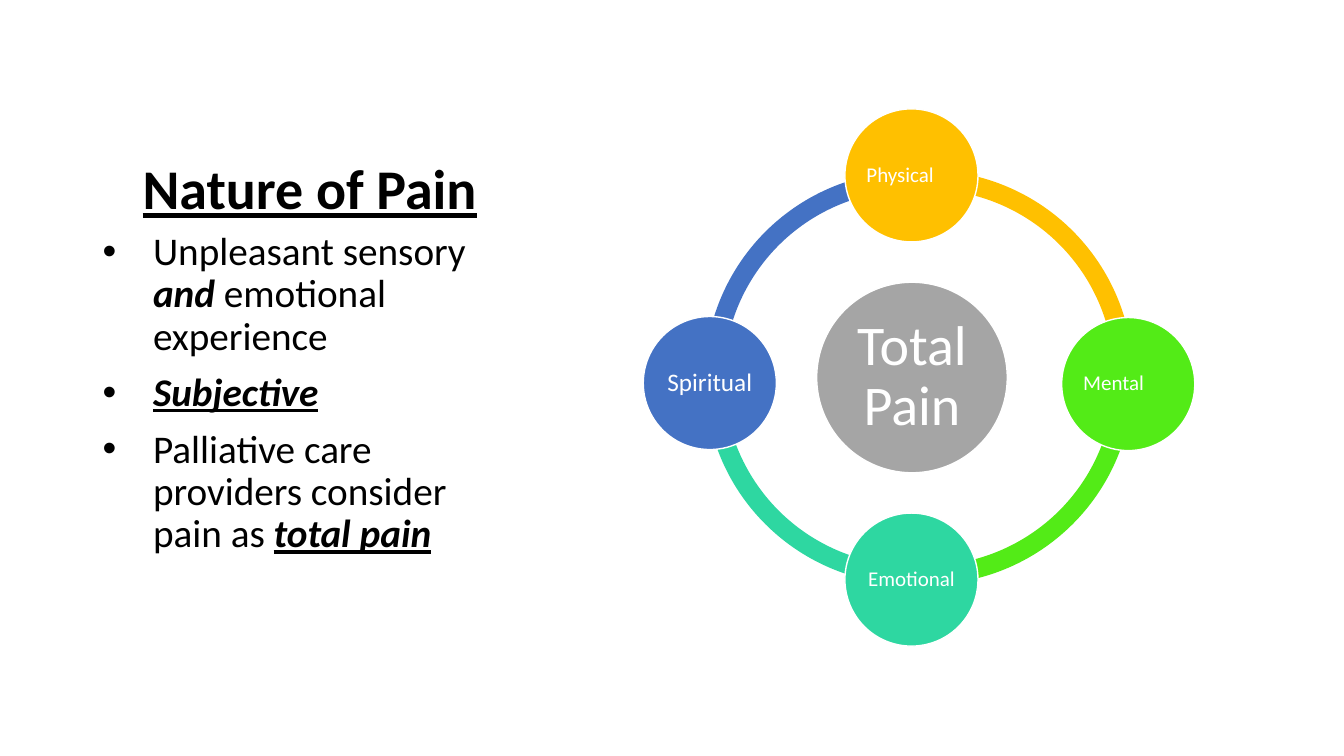
"""Build the Nature of Pain slide with its ring of four kinds of pain."""
from dataclasses import dataclass

from lxml.etree import SubElement
from pptx import Presentation
from pptx.dml.color import RGBColor
from pptx.enum.shapes import MSO_SHAPE
from pptx.enum.text import MSO_ANCHOR, MSO_AUTO_SIZE, PP_ALIGN
from pptx.oxml.ns import qn
from pptx.shapes.autoshape import Shape
from pptx.shapes.shapetree import GroupShapes
from pptx.text.text import TextFrame, _Paragraph, _Run
from pptx.util import Inches, Pt

FONT = "Calibri"
BLACK, WHITE, GREY = "000000", "FFFFFF", "A5A5A5"
BLUE, TEAL, GREEN, GOLD = "4472C4", "2ED7A1", "53EB17", "FFC000"
RING_SIZE, RING_THICKNESS = 4.1, 0.046
HUB_SIZE, NODE_SIZE = 1.89, 1.32
COLUMN_LEFT, COLUMN_WIDTH = 0.92, 4.3


@dataclass(frozen=True)
class Arc:
    left: float
    top: float
    start: float
    end: float
    fill: str


@dataclass(frozen=True)
class Circle:
    label: str
    left: float
    top: float
    diameter: float
    fill: str
    font_size: int
    inset: float


@dataclass(frozen=True)
class Phrase:
    text: str
    emphasis: bool = False
    underline: bool = False


ARCS = [
    Arc(6.99, 1.7, 107.032, 162.014, BLUE),
    Arc(6.99, 1.7, 53.986, 107.032, TEAL),
    Arc(7.14, 1.7, 1.123, 56.439, GREEN),
    Arc(7.14, 1.69, 159.555, 1.296, GOLD),
]
CIRCLES = [
    Circle("Total Pain", 8.1, 2.8, HUB_SIZE, GREY, 40, 0.06),
    Circle("Physical\t", 8.38, 1.08, NODE_SIZE, GOLD, 15, 0.02),
    Circle("Mental\t", 10.53, 3.15, NODE_SIZE, GREEN, 15, 0.02),
    Circle("Emotional", 8.38, 5.09, NODE_SIZE, TEAL, 15, 0.02),
    Circle("Spiritual ", 6.38, 3.14, NODE_SIZE, BLUE, 18, 0.03),
]
BULLETS = [
    [Phrase("Unpleasant sensory "), Phrase("and", True), Phrase(" emotional experience")],
    [Phrase("Subjective", True, True)],
    [Phrase("Palliative care providers consider pain as "), Phrase("total pain", True, True)],
]


def colour(value: str) -> RGBColor:
    """Turn a hex string into a colour."""
    return RGBColor.from_string(value)


def format_run(run: _Run, size: int, fill: str, bold: bool = False,
               italic: bool = False, underline: bool = False) -> None:
    """Set the font of one run."""
    font = run.font
    font.name, font.size = FONT, Pt(size)
    font.bold, font.italic, font.underline = bold, italic, underline
    font.color.rgb = colour(fill)


def prepare_frame(frame: TextFrame, anchor: MSO_ANCHOR) -> None:
    """Wrap the text at a fixed size and anchor it."""
    frame.word_wrap = True
    frame.auto_size = MSO_AUTO_SIZE.NONE
    frame.vertical_anchor = anchor


def centre_text(frame: TextFrame, text: str) -> _Run:
    """Write one centred paragraph and return its run."""
    frame.text = text
    paragraph = frame.paragraphs[0]
    paragraph.alignment = PP_ALIGN.CENTER
    paragraph.line_spacing = 0.9
    return paragraph.runs[0]


def add_filled_shape(shapes: GroupShapes, kind: MSO_SHAPE, left: float, top: float,
                     size: float, fill: str) -> Shape:
    """Add a square-framed shape with a solid fill and no shadow."""
    shape = shapes.add_shape(kind, Inches(left), Inches(top), Inches(size), Inches(size))
    shape.shadow.inherit = False
    shape.fill.solid()
    shape.fill.fore_color.rgb = colour(fill)
    return shape


def draw_arc(shapes: GroupShapes, arc: Arc) -> None:
    """Draw one quarter of the ring."""
    shape = add_filled_shape(shapes, MSO_SHAPE.BLOCK_ARC, arc.left, arc.top, RING_SIZE, arc.fill)
    shape.line.fill.background()
    for index, value in enumerate((arc.start, arc.end, RING_THICKNESS)):
        shape.adjustments[index] = value


def draw_circle(shapes: GroupShapes, circle: Circle) -> None:
    """Draw one labelled circle with a white outline."""
    shape = add_filled_shape(shapes, MSO_SHAPE.OVAL, circle.left, circle.top,
                             circle.diameter, circle.fill)
    shape.line.color.rgb = colour(WHITE)
    shape.line.width = Pt(1)
    frame = shape.text_frame
    prepare_frame(frame, MSO_ANCHOR.MIDDLE)
    frame.margin_left = frame.margin_right = Inches(circle.inset)
    frame.margin_top = frame.margin_bottom = Inches(circle.inset)
    format_run(centre_text(frame, circle.label), circle.font_size, WHITE)


def write_bullet(paragraph: _Paragraph, phrases: list[Phrase]) -> None:
    """Write one bulleted paragraph with a hanging indent."""
    paragraph.line_spacing = 0.9
    paragraph.space_before = Pt(10)
    properties = paragraph._p.get_or_add_pPr()
    properties.set("marL", str(Inches(0.5)))
    properties.set("indent", str(Inches(-0.5)))
    SubElement(properties, qn("a:buFont"), typeface="Arial")
    SubElement(properties, qn("a:buChar"), char="•")
    for phrase in phrases:
        run = paragraph.add_run()
        run.text = phrase.text
        format_run(run, 28, BLACK, phrase.emphasis, phrase.emphasis, phrase.underline)


def main() -> None:
    """Build and save the slide."""
    presentation = Presentation()
    presentation.slide_width, presentation.slide_height = Inches(13.33), Inches(7.5)
    slide = presentation.slides.add_slide(presentation.slide_layouts[5])

    title = slide.shapes.title
    title.left, title.top = Inches(COLUMN_LEFT), Inches(0.5)
    title.width, title.height = Inches(COLUMN_WIDTH), Inches(1.75)
    prepare_frame(title.text_frame, MSO_ANCHOR.BOTTOM)
    title_run = centre_text(title.text_frame, "Nature of Pain")
    format_run(title_run, 40, BLACK, bold=True, underline=True)

    diagram = slide.shapes.add_group_shape()
    for arc in ARCS:
        draw_arc(diagram.shapes, arc)
    for circle in CIRCLES:
        draw_circle(diagram.shapes, circle)

    body = slide.shapes.add_textbox(Inches(COLUMN_LEFT), Inches(2.25),
                                    Inches(COLUMN_WIDTH), Inches(4.17))
    frame = body.text_frame
    prepare_frame(frame, MSO_ANCHOR.TOP)
    for index, phrases in enumerate(BULLETS):
        paragraph = frame.add_paragraph() if index else frame.paragraphs[0]
        write_bullet(paragraph, phrases)

    presentation.save("out.pptx")


if __name__ == "__main__":
    main()
